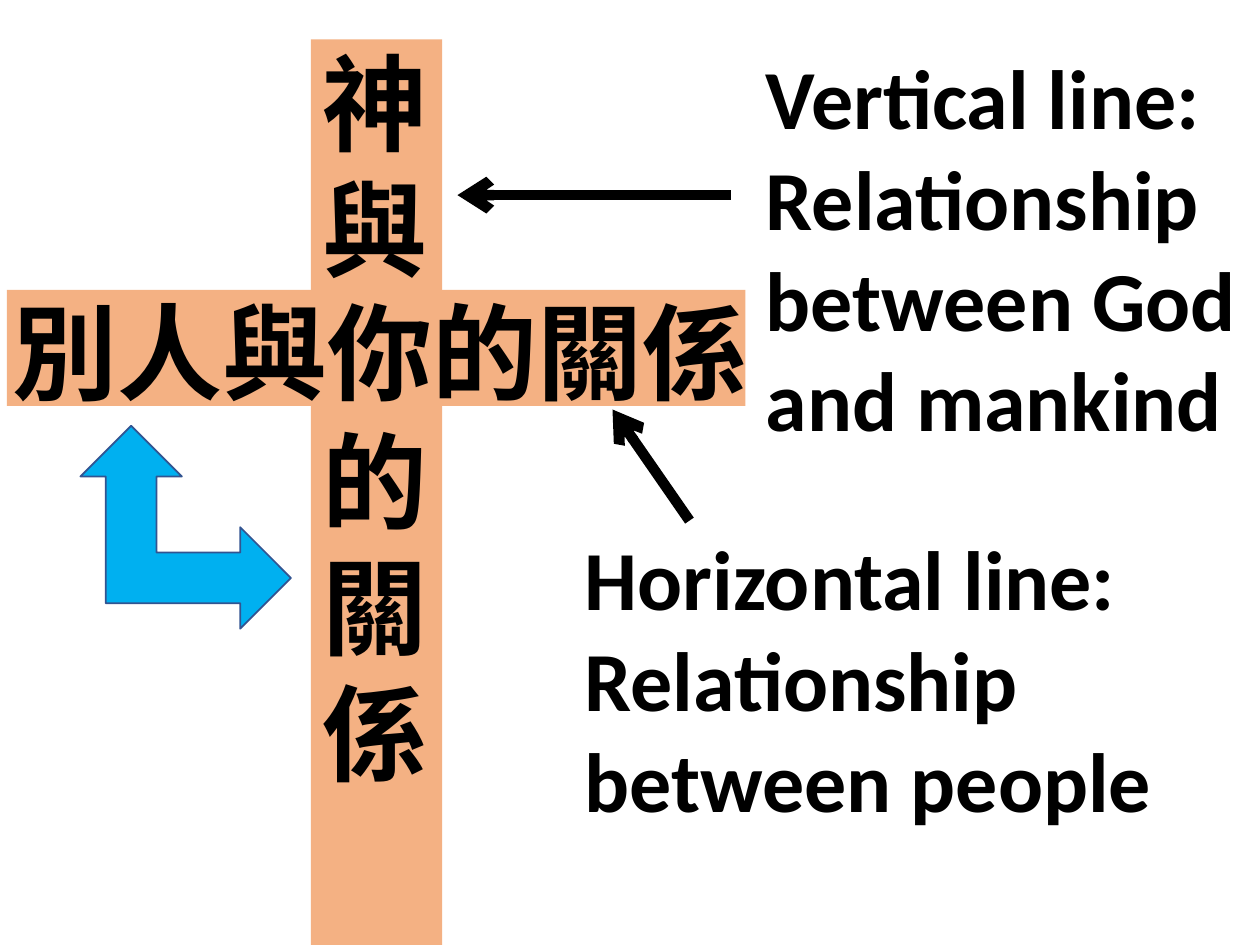
from lxml.etree import SubElement as Sub
from pptx import Presentation
from pptx.dml.color import RGBColor as RGB
from pptx.enum.shapes import MSO_CONNECTOR as Conn, MSO_SHAPE as Kind
from pptx.enum.text import MSO_AUTO_SIZE as Fit
from pptx.oxml.ns import qn
from pptx.util import Pt

BLACK = RGB(0, 0, 0)
PEACH = RGB(0xF4, 0xB1, 0x83)
BLUE = RGB(0x00, 0xB0, 0xF0)
NAVY = RGB(0x32, 0x54, 0x91)
LATIN = "Calibri"
HAN = "Noto Sans CJK TC"


def add_text(slide, lines, box, font=LATIN, size=48, pitch=None):
    frame = slide.shapes.add_textbox(*map(Pt, box)).text_frame
    frame.word_wrap = False
    frame.auto_size = Fit.SHAPE_TO_FIT_TEXT
    for i, line in enumerate(lines):
        para = frame.paragraphs[0] if i == 0 else frame.add_paragraph()
        if pitch:
            para.line_spacing = Pt(pitch)
        run = para.add_run()
        run.text = line
        run.font.name = font
        run.font.size = Pt(size)
        run.font.bold = True
        run.font.color.rgb = BLACK
        Sub(run.font._element, qn("a:ea"), typeface=font)


def add_shape(slide, kind, box, fill, edge=None):
    shape = slide.shapes.add_shape(kind, *map(Pt, box))
    shape.shadow.inherit = False
    shape.fill.solid()
    shape.fill.fore_color.rgb = fill
    if edge:
        shape.line.color.rgb = edge
        shape.line.width = Pt(1)
    else:
        shape.line.fill.background()
    return shape


def add_arrow(slide, start, end):
    arrow = slide.shapes.add_connector(Conn.STRAIGHT, *map(Pt, start + end))
    arrow.line.color.rgb = BLACK
    arrow.line.width = Pt(6)
    Sub(arrow.line._get_or_add_ln(), qn("a:tailEnd"), type="arrow")
    Sub(arrow._element.spPr, qn("a:effectLst"))


def main():
    deck = Presentation()
    deck.slide_width, deck.slide_height = Pt(720), Pt(540)
    slide = deck.slides.add_slide(deck.slide_layouts[6])

    add_text(slide, ["Vertical line:", "Relationship", "between God", "and mankind"],
             (430.5, 22.5, 286, 240))
    add_text(slide, ["Horizontal line:", "Relationship", "between people"],
             (327, 297.5, 341, 181.5))

    add_shape(slide, Kind.RECTANGLE, (177.7, 22.5, 75, 517.5), PEACH)
    add_text(slide, "神與你的關係", (177.3, 18.7, 75, 443.5), font=HAN, size=60, pitch=72)
    add_arrow(slide, (417.6, 111.5), (261.4, 111.5))
    add_arrow(slide, (394, 297.5), (350, 234))

    add_shape(slide, Kind.RECTANGLE, (4, 165.7, 422, 66.3), PEACH)
    add_text(slide, ["別人與你的關係"], (0, 160.5, 438.5, 80), font=HAN, size=60, pitch=72)

    bend = add_shape(slide, Kind.LEFT_UP_ARROW, (46, 243.3, 120.3, 116), BLUE, edge=NAVY)
    bend._element.spPr.xfrm.set("flipH", "1")

    deck.save("out.pptx")


if __name__ == "__main__":
    main()
